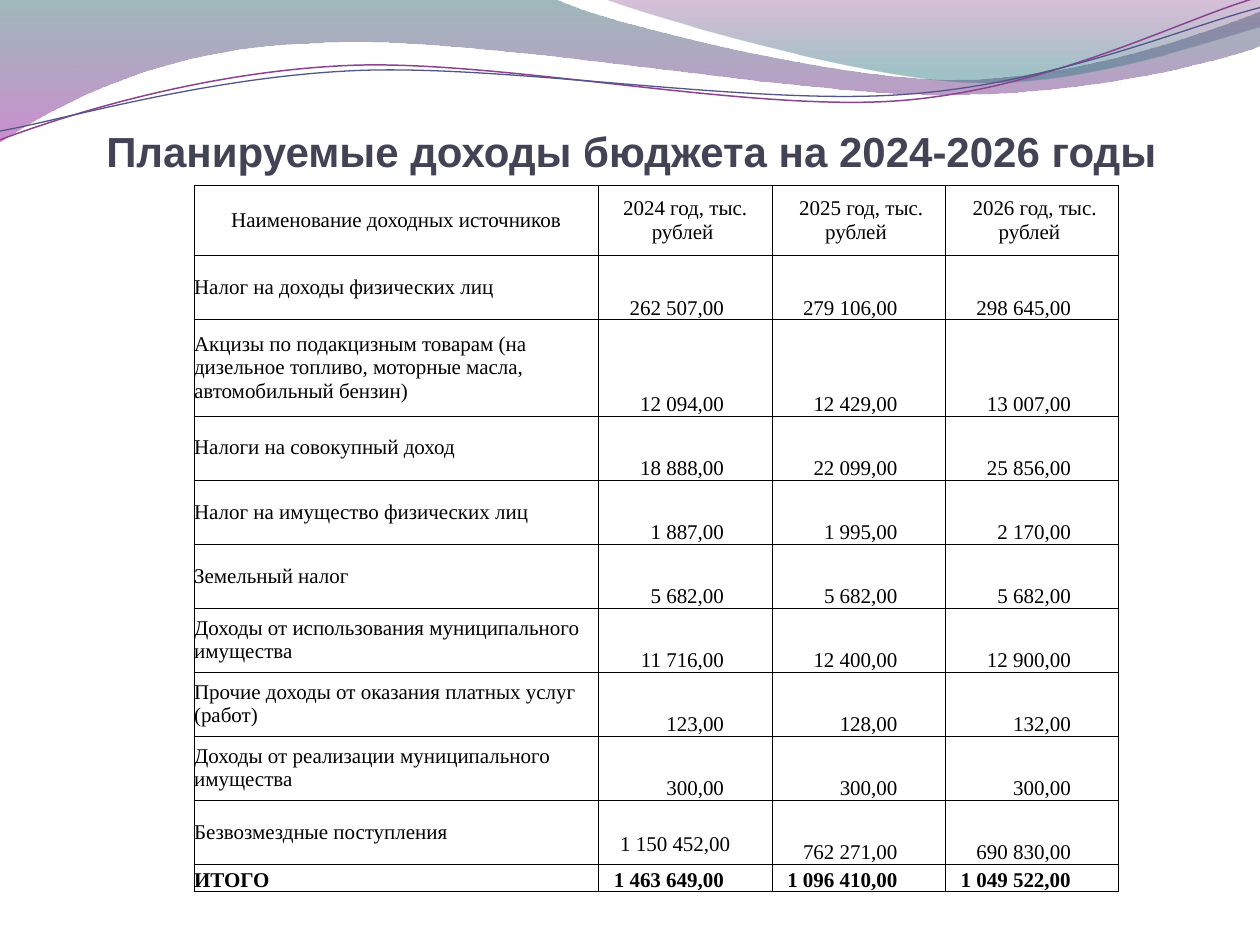
import math
import pptx
import pptx.util
import pptx.oxml
import pptx.oxml.ns
import pptx.dml.color
import pptx.enum.text

Inches = pptx.util.Inches
Pt = pptx.util.Pt
ALIGN = pptx.enum.text.PP_ALIGN
ANCHOR = pptx.enum.text.MSO_ANCHOR
NS = pptx.oxml.ns.nsdecls("a")
HEX = {"title": "424456", "ink": "000000", "teal": "2D6368", "pink": "A530A9",
       "plum": "7F2F82", "aqua": "2F7B82", "rose": "8D4490", "blue": "53548A"}

HEAD = ["Наименование доходных источников", "2024 год, тыс. рублей ",
        " 2025 год, тыс. рублей ", " 2026 год, тыс. рублей "]
ROWS = [
    ("Налог на доходы физических лиц", "262 507,00", "279 106,00", "298 645,00"),
    ("Акцизы по подакцизным товарам (на дизельное топливо, моторные масла, "
     "автомобильный бензин)", "12 094,00", "12 429,00", "13 007,00"),
    ("Налоги на совокупный доход", "18 888,00", "22 099,00", "25 856,00"),
    ("Налог на имущество физических лиц", "1 887,00", "1 995,00", "2 170,00"),
    ("Земельный налог", "5 682,00", "5 682,00", "5 682,00"),
    ("Доходы от использования муниципального имущества",
     "11 716,00", "12 400,00", "12 900,00"),
    ("Прочие доходы от оказания платных услуг (работ)", "123,00", "128,00", "132,00"),
    ("Доходы от реализации муниципального имущества", "300,00", "300,00", "300,00"),
    ("Безвозмездные поступления", "1 150 452,00", "762 271,00", "690 830,00"),
    ("ИТОГО", "1 463 649,00", "1 096 410,00", "1 049 522,00"),
]

TILT = 357.3
BANDS = [
    ((-0.01, -0.01, 10.02, 1.14),
     [(0, 0), (4.4, -0.01),
      (4.76, 0.17, 6.64, 0.63, 7.58, 0.63), (8.53, 0.63, 9.58, 0.26, 10, 0.09),
      (10.01, 0.36), (9.83, 0.44, 8.7, 0.76, 7.46, 0.75),
      (6.22, 0.75, 3.82, 0.28, 2.57, 0.34), (1.29, 0.36, 0.46, 0.83, -0.01, 1.13),
      (0, 0)],
     [(0, "teal", 45), (100, "pink", 55)]),
    ((4.79, -0.01, 5.21, 0.7),
     [(4.79, -0.01), (5.09, 0.11, 6.82, 0.62, 7.69, 0.65),
      (8.56, 0.69, 9.61, 0.32, 10, 0.21), (10, 0), (4.79, -0.01)],
     [(0, "plum", 30), (80, "aqua", 45)]),
]
CURVES = [
    ((-0.02, 0.22, 10.02, 0.71),
     [(0, 1.11), (0.48, 0.93, 1.58, 0.57, 2.77, 0.52),
      (3.95, 0.47, 5.93, 0.89, 7.13, 0.8), (8.33, 0.71, 9.38, 0.15, 9.98, -0.02)],
     "rose", 0.85),
    ((-0.02, 0.3, 10.03, 0.58),
     [(0, 1.04), (0.47, 0.96, 1.64, 0.61, 2.83, 0.56),
      (4.03, 0.51, 5.97, 0.84, 7.17, 0.75), (8.36, 0.67, 9.41, 0.21, 10, 0.06)],
     "blue", 0.75),
]


def tint(name):
    return pptx.dml.color.RGBColor.from_string(HEX[name])


def turn(x, y, box, angle):
    mid_x, mid_y = box[0] + box[2] / 2, box[1] + box[3] / 2
    cos, sin = math.cos(math.radians(angle)), math.sin(math.radians(angle))
    dx, dy = x - mid_x, y - mid_y
    return mid_x + dx * cos - dy * sin, mid_y + dx * sin + dy * cos


def outline(slide, area, box, steps, close, angle=0):
    left, top = Inches(area[0] + box[0]), Inches(area[1] + box[1])
    right, low = left + Inches(box[2]), top + Inches(box[3])
    pen = slide.shapes.build_freeform(left, top, scale=1.0)
    pen.add_line_segments([(right, top), (right, low), (left, low)], close=close)
    shape = pen.convert_to_shape()
    shape.rotation = angle
    shape.shadow.inherit = False
    shape.fill.background()
    route = shape.element.spPr.find(".//" + pptx.oxml.ns.qn("a:path"))
    for old in list(route):
        route.remove(old)
    for i, step in enumerate(steps):
        tag = "moveTo" if i == 0 else "lnTo" if len(step) == 2 else "cubicBezTo"
        dots = ""
        for x, y in zip(step[::2], step[1::2]):
            x, y = turn(x, y, box, -angle)
            dots += f'<a:pt x="{Inches(x - box[0])}" y="{Inches(y - box[1])}"/>'
        route.append(pptx.oxml.parse_xml(f"<a:{tag} {NS}>{dots}</a:{tag}>"))
    if close:
        route.append(pptx.oxml.parse_xml(f"<a:close {NS}/>"))
    return shape


def blend(shape, stops):
    marks = "".join(
        f'<a:gs pos="{pos * 1000}"><a:srgbClr val="{HEX[name]}">'
        f'<a:alpha val="{alpha * 1000}"/></a:srgbClr></a:gs>'
        for pos, name, alpha in stops)
    fill = pptx.oxml.parse_xml(
        f'<a:gradFill {NS} rotWithShape="1"><a:gsLst>{marks}</a:gsLst>'
        '<a:lin ang="5400000" scaled="0"/></a:gradFill>')
    props = shape.element.spPr
    props.replace(props.find(pptx.oxml.ns.qn("a:noFill")), fill)


def add_waves(slide, area):
    for box, steps, stops in BANDS:
        shape = outline(slide, area, box, steps, True)
        blend(shape, stops)
        shape.line.fill.background()
    for box, steps, name, width in CURVES:
        shape = outline(slide, area, box, steps, False, TILT)
        shape.line.color.rgb = tint(name)
        shape.line.width = Pt(width)


def write(frame, text, font, size, name, bold, align):
    para = frame.paragraphs[0]
    para.alignment = align
    run = para.add_run()
    run.text = text
    run.font.name = font
    run.font.size = Pt(size)
    run.font.bold = bold
    run.font.color.rgb = tint(name)


def add_title(slide, box):
    frame = slide.shapes.add_textbox(*map(Inches, box)).text_frame
    frame.word_wrap = True
    frame.vertical_anchor = ANCHOR.BOTTOM
    frame.margin_left = frame.margin_right = frame.margin_bottom = 0
    frame.margin_top = Inches(0.05)
    write(frame, "Планируемые доходы бюджета на 2024-2026 годы",
          "Arial", 24, "title", True, ALIGN.CENTER)


def edge(cell):
    props = cell._tc.get_or_add_tcPr()
    for side in "LRTB":
        props.append(pptx.oxml.parse_xml(
            f'<a:ln{side} {NS} w="{Pt(0.5)}"><a:solidFill>'
            f'<a:srgbClr val="{HEX["ink"]}"/></a:solidFill></a:ln{side}>'))


def add_table(slide, box):
    data = [HEAD] + ROWS
    table = slide.shapes.add_table(len(data), len(HEAD), *map(Inches, box)).table
    table.first_row = table.horz_banding = False
    name, head, total = 3.21, 0.56, 0.22
    unit = (box[3] - head - total) / 9.5
    for col, width in zip(table.columns, [name] + [(box[2] - name) / 3] * 3):
        col.width = Inches(width)
    for row, height in zip(table.rows, [head, unit, unit * 1.5] + [unit] * 7 + [total]):
        row.height = Inches(height)
    last = len(data) - 1
    for r, line in enumerate(data):
        for c, text in enumerate(line):
            cell = table.cell(r, c)
            edge(cell)
            cell.fill.background()
            cell.margin_left = cell.margin_right = 0
            cell.margin_top = cell.margin_bottom = 0
            mid = r == 0 or (c == 0 and r < last)
            cell.vertical_anchor = ANCHOR.MIDDLE if mid else ANCHOR.BOTTOM
            align = ALIGN.CENTER if r == 0 else ALIGN.LEFT
            if r and c:
                align = ALIGN.RIGHT
                cell.margin_right = Inches(0.38)
            write(cell.text_frame, text, "Times New Roman", 12, "ink", r == last, align)
    grant = table.cell(last - 1, 1)
    grant.vertical_anchor = ANCHOR.MIDDLE
    grant.margin_top = Inches(0.19)
    grant.margin_right = Inches(0.33)


def main():
    deck = pptx.Presentation()
    deck.slide_width, deck.slide_height = Inches(10), Inches(7.5)
    slide = deck.slides.add_slide(deck.slide_layouts[6])
    add_waves(slide, (0, 0))
    add_title(slide, (0.47, 0.7, 9.08, 0.7))
    add_table(slide, (1.54, 1.47, 7.34, 5.61))
    deck.save("out.pptx")


if __name__ == "__main__":
    main()
